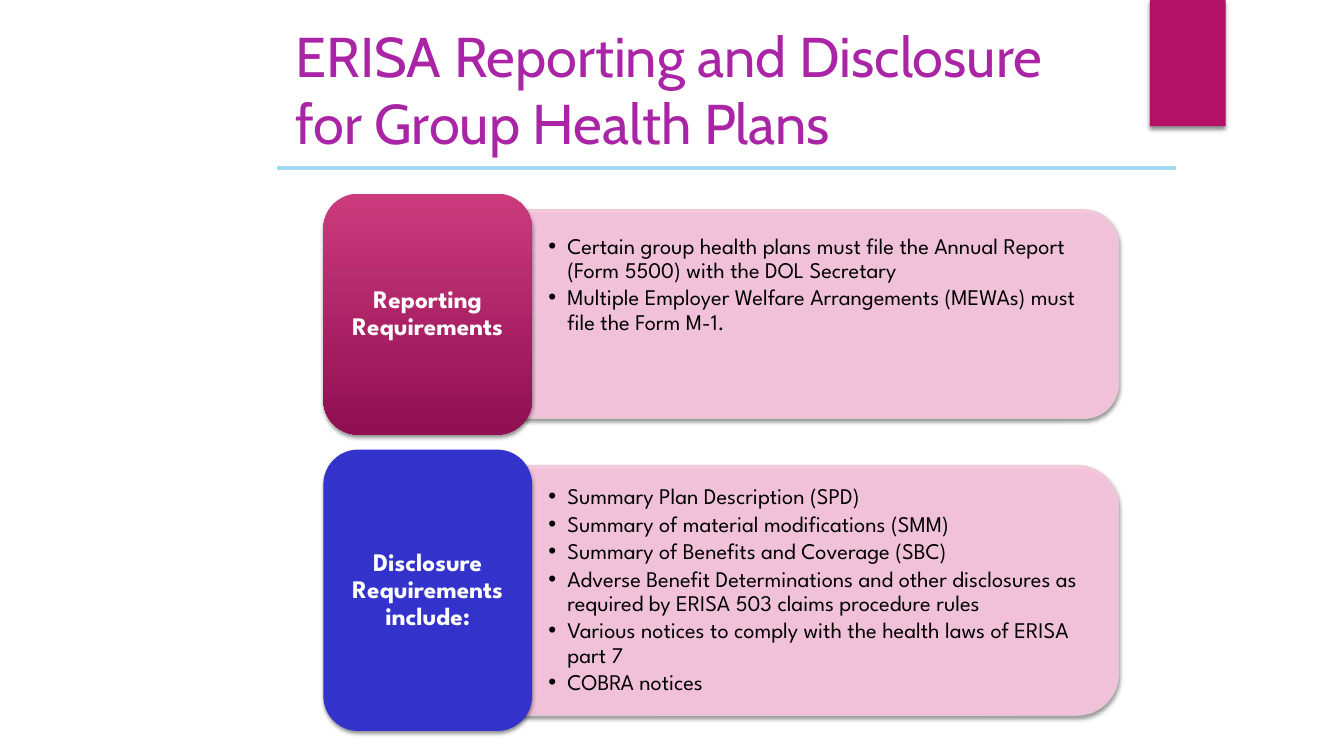
"""Build the slide on ERISA reporting and disclosure for group health plans."""
from lxml.etree import SubElement
from pptx import Presentation
from pptx.dml.color import RGBColor
from pptx.enum.shapes import MSO_CONNECTOR, MSO_SHAPE
from pptx.enum.text import MSO_ANCHOR, MSO_AUTO_SIZE, PP_ALIGN
from pptx.oxml import parse_xml
from pptx.oxml.ns import nsdecls, qn
from pptx.util import Cm, Pt

COLORS = {
    "title": "A925A5",
    "ribbon": "B31166",
    "rule": "A0D9F2",
    "panel": "FAC6E1",
    "panel_edge": "E5CCD3",
    "reporting_top": "CB3B7C",
    "reporting_bottom": "900E52",
    "disclosure": "3333CC",
    "label": "FFFFFF",
    "body": "000000",
}
SECTIONS = [
    {
        "label": "Reporting Requirements",
        "fill": ["reporting_top", "reporting_bottom"],
        "top": 4.88, "height": 6.07, "panel_height": 5.26,
        "anchor": MSO_ANCHOR.TOP,
        "points": [
            "Certain group health plans must file the Annual Report (Form 5500) with the DOL Secretary",
            "Multiple Employer Welfare Arrangements (MEWAs) must file the Form M-1.",
        ],
    },
    {
        "label": "Disclosure Requirements include:",
        "fill": ["disclosure"],
        "top": 11.33, "height": 7.09, "panel_height": 6.3,
        "anchor": MSO_ANCHOR.MIDDLE,
        "points": [
            "Summary Plan Description (SPD)",
            "Summary of material modifications (SMM)",
            "Summary of Benefits and Coverage (SBC)",
            "Adverse Benefit Determinations and other disclosures as required by ERISA 503 claims procedure rules",
            "Various notices to comply with the health laws of ERISA part 7",
            "COBRA notices",
        ],
    },
]
TILE_LEFT, TILE_WIDTH = 8.15, 5.26
PANEL_LEFT, PANEL_WIDTH = 13.13, 15.06


def add_block(preset, left, top, width, height, fills):
    block = slide.shapes.add_shape(preset, Cm(left), Cm(top), Cm(width), Cm(height))
    if len(fills) == 2:
        block.fill.gradient()
        block.fill.gradient_angle = 270
        for stop, position, name in zip(block.fill.gradient_stops, (0, 1), fills):
            stop.position = position
            stop.color.rgb = RGBColor.from_string(COLORS[name])
    else:
        block.fill.solid()
        block.fill.fore_color.rgb = RGBColor.from_string(COLORS[fills[0]])
    block.line.fill.background()
    block.shadow.inherit = False
    block._element.spPr.find(qn("a:effectLst")).append(parse_xml(
        f'<a:outerShdw {nsdecls("a")} blurRad="{Pt(3)}" dist="{Pt(2)}" dir="5400000" rotWithShape="0">'
        '<a:srgbClr val="000000"><a:alpha val="45000"/></a:srgbClr></a:outerShdw>'))
    return block


def add_run(paragraph, text, font_name, size, color, bold=False):
    run = paragraph.add_run()
    run.text = text
    run.font.name = font_name
    run.font.size = Pt(size)
    run.font.bold = bold
    run.font.color.rgb = RGBColor.from_string(COLORS[color])


presentation = Presentation()
presentation.slide_width, presentation.slide_height = Cm(33.87), Cm(19.05)
slide = presentation.slides.add_slide(presentation.slide_layouts[5])

add_block(MSO_SHAPE.RECTANGLE, 28.98, 0, 1.91, 3.18, ["ribbon"])

title = slide.shapes.title
title.left, title.top, title.width, title.height = Cm(7.19), Cm(0.64), Cm(20.12), Cm(3.18)
title.text_frame.word_wrap = True
title.text_frame.auto_size = MSO_AUTO_SIZE.NONE
title.text_frame.vertical_anchor = MSO_ANCHOR.MIDDLE
heading = title.text_frame.paragraphs[0]
heading.alignment = PP_ALIGN.LEFT
add_run(heading, "ERISA Reporting and Disclosure for Group Health Plans", "Cabin", 40, "title")

rule = slide.shapes.add_connector(MSO_CONNECTOR.STRAIGHT, Cm(6.99), Cm(4.24), Cm(29.64), Cm(4.24))
rule.line.color.rgb = RGBColor.from_string(COLORS["rule"])
rule.line.width = Pt(3)
SubElement(rule._element.spPr, qn("a:effectLst"))

for section in SECTIONS:
    middle = section["top"] + section["height"] / 2
    thickness = section["panel_height"]

    panel = add_block(
        MSO_SHAPE.ROUND_2_SAME_RECTANGLE,
        PANEL_LEFT + (PANEL_WIDTH - thickness) / 2, middle - PANEL_WIDTH / 2,
        thickness, PANEL_WIDTH, ["panel"])
    panel.rotation = 90
    panel.line.color.rgb = RGBColor.from_string(COLORS["panel_edge"])
    panel.line.width = Pt(0.75)
    for tint in panel._element.spPr.iter(qn("a:srgbClr")):
        if tint.getparent().tag == qn("a:solidFill"):
            SubElement(tint, qn("a:alpha"), val="90000")

    text_height = thickness - 0.55
    details = slide.shapes.add_textbox(
        Cm(PANEL_LEFT), Cm(middle - text_height / 2), Cm(14.8), Cm(text_height)).text_frame
    details.word_wrap = True
    details.vertical_anchor = section["anchor"]
    details.margin_left = details.margin_right = Cm(0.69)
    details.margin_top = details.margin_bottom = Cm(0.36)
    for index, point in enumerate(section["points"]):
        item = details.add_paragraph() if index else details.paragraphs[0]
        item.level = 1
        properties = item._p.get_or_add_pPr()
        properties.set("marL", str(Cm(0.48)))
        properties.set("indent", str(-Cm(0.48)))
        SubElement(properties, qn("a:buFont"), typeface="Arial")
        SubElement(properties, qn("a:buChar"), char="•")
        item.line_spacing = 0.9
        item.space_after = Pt(2.4)
        add_run(item, point, "League Spartan", 16, "body")

    tile = add_block(
        MSO_SHAPE.ROUNDED_RECTANGLE, TILE_LEFT, section["top"],
        TILE_WIDTH, section["height"], section["fill"])
    label = tile.text_frame
    label.word_wrap = True
    label.vertical_anchor = MSO_ANCHOR.MIDDLE
    label.margin_left = label.margin_right = Cm(0.18)
    label.margin_top = label.margin_bottom = Cm(0.1)
    caption = label.paragraphs[0]
    caption.alignment = PP_ALIGN.CENTER
    caption.line_spacing = 0.9
    add_run(caption, section["label"], "League Spartan", 18, "label", bold=True)

presentation.save("out.pptx")
